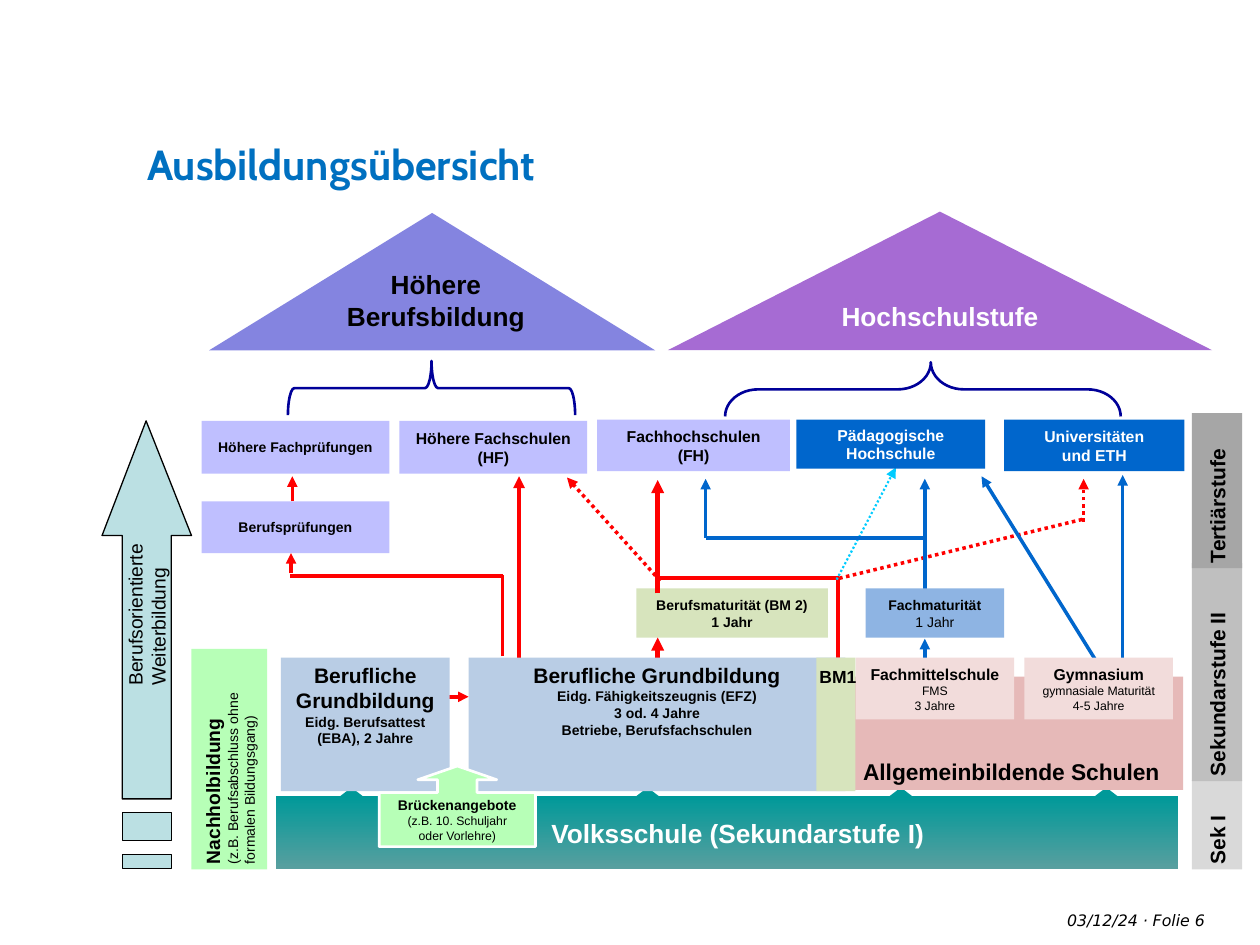
from lxml.etree import SubElement as Sub
from pptx import Presentation
from pptx.dml.color import RGBColor as RGB
from pptx.enum.dml import MSO_LINE as Dash
from pptx.enum.shapes import MSO_CONNECTOR as Conn, MSO_SHAPE as Kind
from pptx.enum.text import MSO_ANCHOR as Anchor, PP_ALIGN as Align
from pptx.oxml.ns import qn
from pptx.util import Inches, Pt

HEX = {
    "black": "000000", "white": "FFFFFF", "title": "0070C0", "red": "FF0000",
    "blue": "0066CC", "cyan": "00CCFF", "navy": "000099", "lilac": "BFBFFF",
    "violet": "8484E0", "purple": "A66BD3", "teal": "009999", "mist": "599F9F",
    "green": "B7FFB7", "olive": "D7E4BD", "steel": "B9CDE5", "sky": "8EB4E3",
    "rose": "E6B9B8", "blush": "F2DCDB", "aqua": "BBE0E3",
    "light": "D9D9D9", "mid": "BFBFBF", "dark": "A6A6A6",
}
TITLE = "Ausbildungsübersicht"
BASE = {"kind": Kind.RECTANGLE, "color": "black", "align": Align.CENTER,
        "anchor": Anchor.MIDDLE, "font": "Arial", "italic": False,
        "ins": (0.08, 0.04, 0.08, 0.04)}
TOP = {"anchor": Anchor.TOP}
PALE = {"color": "white"}
SIDE = {"vert": "vert270", "align": Align.LEFT}
FOOT = {"anchor": Anchor.TOP, "font": "DejaVu Sans", "italic": True, "ins": (0, 0, 0, 0)}
ROOF = {"kind": Kind.ISOSCELES_TRIANGLE}
BRACE = {"kind": Kind.RIGHT_BRACE, "turn": 270, "line": ("navy", 1.5)}

# place, fill, lines of (text, size, bold), format
BACK = [
    ((7.49, 7.23, 1.54, 0.2), None, [("03/12/24", 9, False)], {**FOOT, "align": Align.RIGHT}),
    ((9.07, 7.23, 0.76, 0.2), None, [("· Folie 6", 9, False)], {**FOOT, "align": Align.LEFT}),
    ((9.46, 6.19, 0.4, 0.71), "light", [("Sek I", 12, True)], SIDE),
    ((9.46, 4.47, 0.4, 1.73), "mid", [("Sekundarstufe II", 12, True)], SIDE),
    ((9.46, 3.28, 0.4, 1.23), "dark", [("Tertiärstufe", 12, True)], SIDE),
    ((5.05, 4.67, 1.52, 0.39), "olive",
     [("Berufsmaturität (BM 2)", 8, True), ("1 Jahr", 8, True)], {}),
    ((3.17, 3.34, 1.49, 0.42), "lilac", [("Höhere Fachschulen", 9, True), ("(HF)", 9, True)], {}),
    ((1.6, 3.34, 1.49, 0.42), "lilac", [("Höhere Fachprüfungen", 8, True)], {}),
    ((1.6, 3.98, 1.49, 0.41), "lilac", [("Berufsprüfungen", 8, True)], {}),
    ((1.66, 1.69, 3.54, 1.09), "violet", [], {**ROOF, "adj": (0.5,)}),
    ((3.21, 1.94, 0.43, 2.28), None, [], {**BRACE, "adj": (0.12, 0.5)}),
    ((7.11, 1.52, 0.43, 3.14), None, [], {**BRACE, "adj": (0.61, 0.52)}),
    ((5.3, 1.68, 4.32, 1.1), "purple", [("Hochschulstufe", 15, True)],
     {**ROOF, **PALE, "adj": (0.5,)}),
]
TICKS = [((x, 6.25, 0.26, 0.1), "teal", [], ROOF) for x in (2.66, 5.01, 7.02, 8.65)]
FRONT = [
    ((7.97, 3.33, 1.43, 0.41), "blue", [("Universitäten", 9, True), ("und ETH", 9, True)], PALE),
    ((6.32, 3.33, 1.5, 0.39), "blue", [("Pädagogische", 9, True), ("Hochschule", 9, True)], PALE),
    *TICKS,
    ((2.19, 6.32, 7.16, 0.58), ("teal", "mist"), [("Volksschule (Sekundarstufe I)", 15, True)],
     {**PALE, "ins": (0.27, 0.05, 0.1, 0.05)}),
    ((1.52, 5.15, 0.6, 1.75), "green",
     [("Nachholbildung", 11, True), ("(z.B. Berufsabschluss ohne", 8, False),
      ("formalen Bildungsgang)", 8, False)], SIDE),
    ((4.74, 3.33, 1.53, 0.41), "lilac", [("Fachhochschulen", 9, True), ("(FH)", 9, True)], {}),
    ((2.23, 5.22, 1.34, 1.06), "steel",
     [("Berufliche", 12, True), ("Grundbildung", 12, True),
      ("Eidg. Berufsattest (EBA), 2 Jahre", 8, True)], TOP),
    ((3.72, 5.22, 2.99, 1.06), "steel",
     [("Berufliche Grundbildung", 12, True), ("Eidg. Fähigkeitszeugnis (EFZ)", 8, True),
      ("3 od. 4 Jahre", 8, True), ("Betriebe, Berufsfachschulen", 8, True)], TOP),
    ((6.66, 5.37, 2.73, 0.9), "rose", [("Allgemeinbildende Schulen", 13, True)],
     {"anchor": Anchor.BOTTOM}),
    ((6.79, 5.22, 1.26, 0.49), "blush",
     [("Fachmittelschule", 9, True), ("FMS", 7, False), ("3 Jahre", 7, False)], {}),
    ((8.13, 5.22, 1.18, 0.49), "blush",
     [("Gymnasium", 9, True), ("gymnasiale Maturität", 7, False), ("4-5 Jahre", 7, False)], {}),
    ((3.01, 6.08, 1.24, 0.64), "green",
     [("Brückenangebote", 8, True), ("(z.B. 10. Schuljahr", 7, False),
      ("oder Vorlehre)", 7, False)],
     {"kind": Kind.UP_ARROW_CALLOUT, "adj": (0.49, 0.49, 0.17, 0.67), "line": ("white", 1.5)}),
    ((0.56, 4.57, 1.34, 0.6), None, [("Berufsorientierte Weiterbildung", 11, False)],
     {**TOP, "align": Align.LEFT, "turn": 270, "ins": (0.1, 0.05, 0.1, 0.05)}),
    ((6.48, 5.22, 0.31, 1.06), "olive", [], {}),
    ((6.4, 5.24, 0.5, 0.3), None, [("BM1", 10, True)], {**TOP, "ins": (0.05, 0.05, 0.05, 0.05)}),
    ((1.96, 2.09, 3, 0.7), None, [("Höhere", 15, True), ("Berufsbildung", 15, True)], TOP),
    ((6.87, 4.67, 1.1, 0.39), "sky", [("Fachmaturität", 8, True), ("1 Jahr", 8, False)], {}),
]
# from x, y, to x, y, arrowhead; grouped by color, width, dash
LINES = {
    ("red", 2, None): [
        (3.4, 5.53, 3.72, 5.53, True), (3.99, 5.21, 3.99, 4.56, False),
        (2.32, 3.98, 2.32, 3.78, True), (2.3, 4.57, 3.99, 4.57, False),
        (2.31, 4.55, 2.31, 4.39, True)],
    ("red", 2.25, None): [(4.12, 5.28, 4.12, 3.78, True)],
    ("red", 2.5, None): [
        (5.22, 5.26, 5.22, 5.06, True), (6.65, 5.33, 6.65, 4.59, False),
        (5.22, 4.71, 5.22, 3.81, True), (6.66, 4.59, 5.22, 4.59, False)],
    ("red", 2, Dash.ROUND_DOT): [
        (5.24, 4.61, 4.5, 3.79, True), (6.66, 4.59, 8.6, 4.12, False),
        (8.6, 4.14, 8.6, 3.8, True)],
    ("cyan", 1.25, Dash.ROUND_DOT): [(6.64, 4.6, 7.11, 3.71, True)],
    ("blue", 2, None): [
        (7.34, 5.26, 7.34, 5.07, True), (8.91, 5.22, 8.91, 3.77, True),
        (7.34, 4.7, 7.34, 3.8, True), (7.34, 4.27, 5.6, 4.27, False),
        (5.6, 4.27, 5.6, 3.8, True), (8.69, 5.23, 7.79, 3.78, True)],
}
# big arrow and its two tail bars, in hundredths of an inch
ARROW = [(81, 425), (97, 425), (97, 634), (136, 634), (136, 425), (152, 425), (116, 334)]
BARS = [(645, 667), (678, 689)]


def rgb(name):
    return RGB.from_string(HEX[name])


def paint(shape, fill, line=None):
    if isinstance(fill, tuple):
        shape.fill.gradient()
        shape.fill.gradient_angle = 270
        for stop, name in zip(shape.fill.gradient_stops, fill):
            stop.color.rgb = rgb(name)
    elif fill:
        shape.fill.solid()
        shape.fill.fore_color.rgb = rgb(fill)
    else:
        shape.fill.background()
    if line:
        shape.line.color.rgb = rgb(line[0])
        shape.line.width = Pt(line[1])
    else:
        shape.line.fill.background()
    shape.shadow.inherit = False


def write(frame, rows, form):
    """Put the rows into one paragraph, with line breaks between them."""
    frame.word_wrap = True
    frame.vertical_anchor = form["anchor"]
    for side, size in zip(("left", "top", "right", "bottom"), form["ins"]):
        setattr(frame, "margin_" + side, Inches(size))
    para = frame.paragraphs[0]
    para.alignment = form["align"]
    para.space_before = Pt(0)
    for i, (text, size, bold) in enumerate(rows):
        if i:
            para.add_line_break()
        run = para.add_run()
        run.text = text
        looks = {"name": form["font"], "size": Pt(size), "bold": bold, "italic": form["italic"]}
        for key, value in looks.items():
            setattr(run.font, key, value)
        run.font.color.rgb = rgb(form["color"])
    if "vert" in form:
        frame._txBody.bodyPr.set("vert", form["vert"])


def draw(shapes, place, fill, rows, form):
    form = {**BASE, **form}
    spot = [Inches(v) for v in place]
    if fill or "line" in form:
        shape = shapes.add_shape(form["kind"], *spot)
        paint(shape, fill, form.get("line"))
    else:
        shape = shapes.add_textbox(*spot)
    for i, value in enumerate(form.get("adj", ())):
        shape.adjustments[i] = value
    shape.rotation = form.get("turn", 0)
    if rows:
        write(shape.text_frame, rows, form)


def link(shapes, ends, look, head):
    color, width, dash = look
    line = shapes.add_connector(Conn.STRAIGHT, *[Inches(v) for v in ends])
    line.line.color.rgb = rgb(color)
    line.line.width = Pt(width)
    if dash:
        line.line.dash_style = dash
    if head:
        Sub(line.line._get_or_add_ln(), qn("a:tailEnd"), type="triangle")
    Sub(line._element.spPr, qn("a:effectLst"))


def arrow(shapes):
    pen = shapes.build_freeform(*ARROW[0], scale=Inches(0.01))
    pen.add_line_segments(ARROW[1:])
    for top, low in BARS:
        pen.move_to(97, low)
        pen.add_line_segments([(136, low), (136, top), (97, top)])
    paint(pen.convert_to_shape(), "aqua", ("black", 0.75))


def main():
    deck = Presentation()
    deck.slide_width, deck.slide_height = Inches(10), Inches(7.5)
    slide = deck.slides.add_slide(deck.slide_layouts[5])
    shapes = slide.shapes
    title = shapes.title
    title.left, title.top, title.width, title.height = map(Inches, (1.17, 1.1, 8.66, 0.5))
    write(title.text_frame, [(TITLE, 24, True)],
          {**BASE, **TOP, "align": Align.LEFT, "font": "Cabin", "color": "title",
           "ins": (0, 0, 0, 0)})
    for item in BACK:
        draw(shapes, *item)
    for look, rows in LINES.items():
        for *ends, head in rows:
            link(shapes, ends, look, head)
    arrow(shapes)
    for item in FRONT:
        draw(shapes, *item)
    deck.save("out.pptx")


if __name__ == "__main__":
    main()
